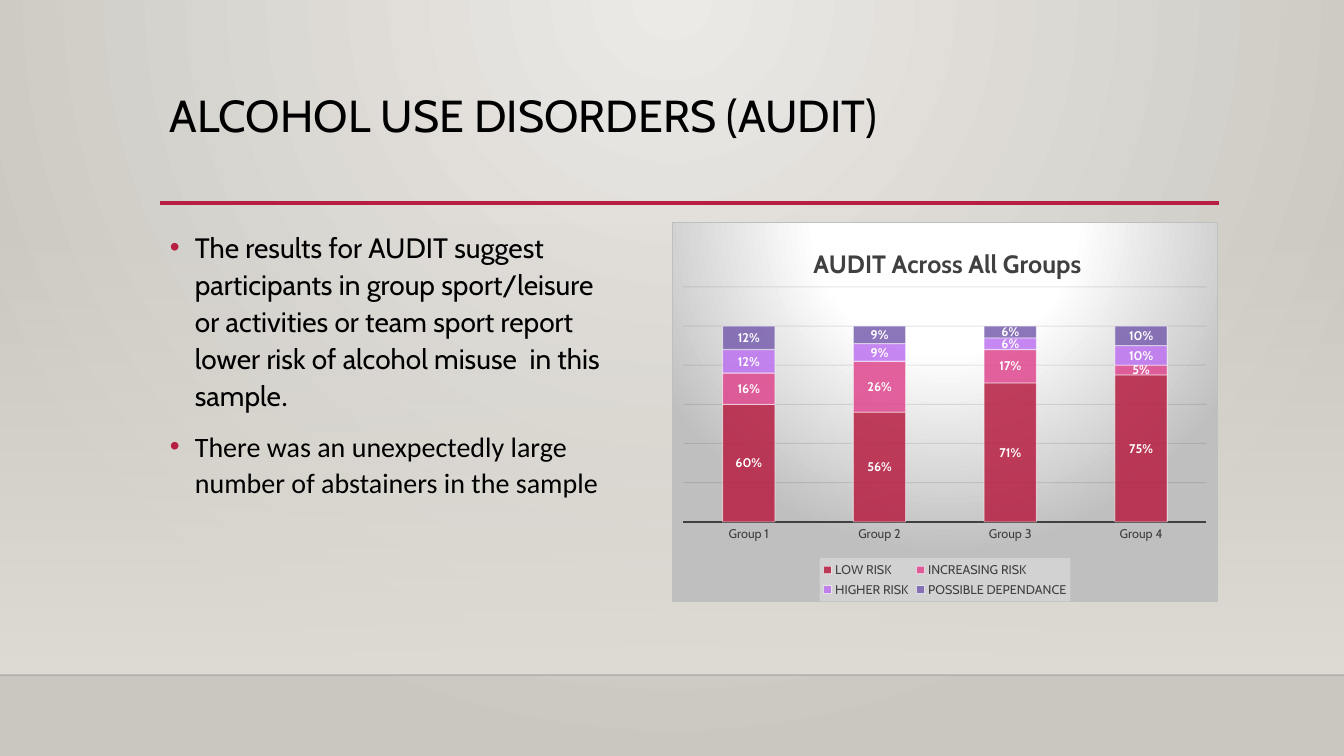
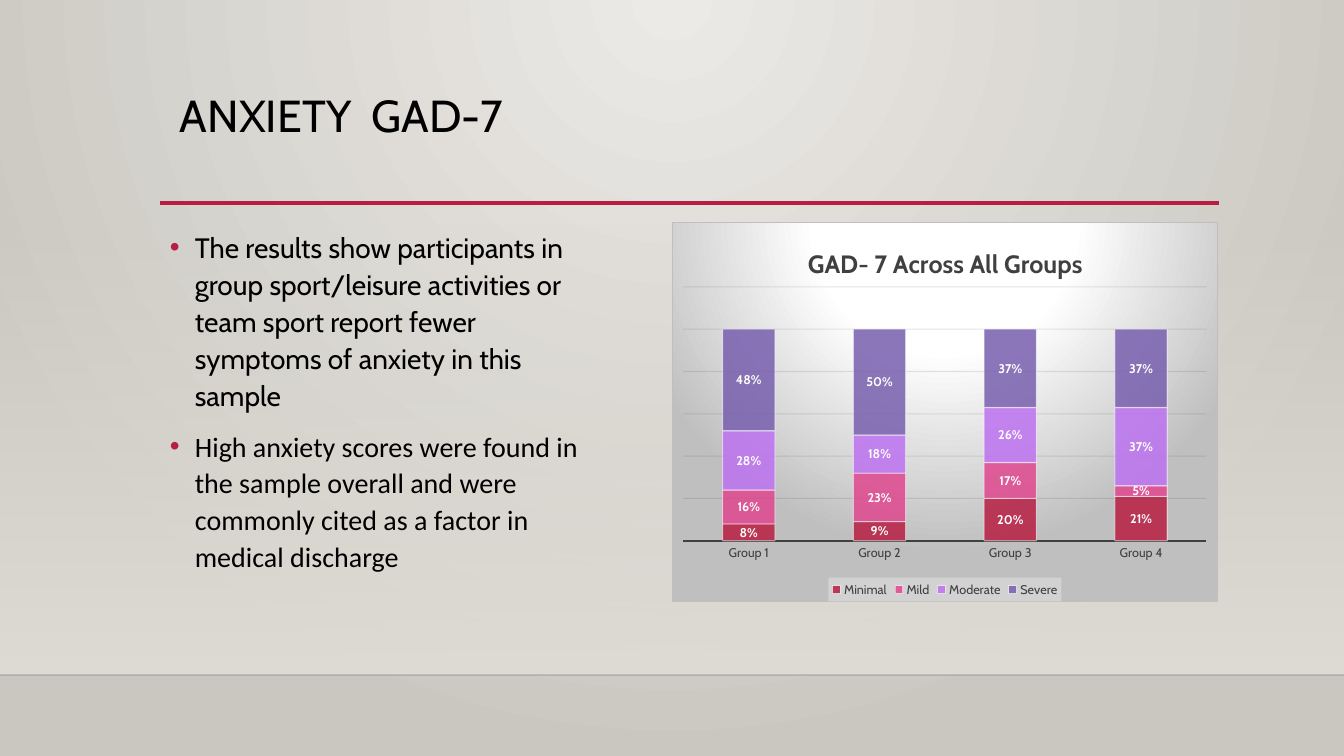
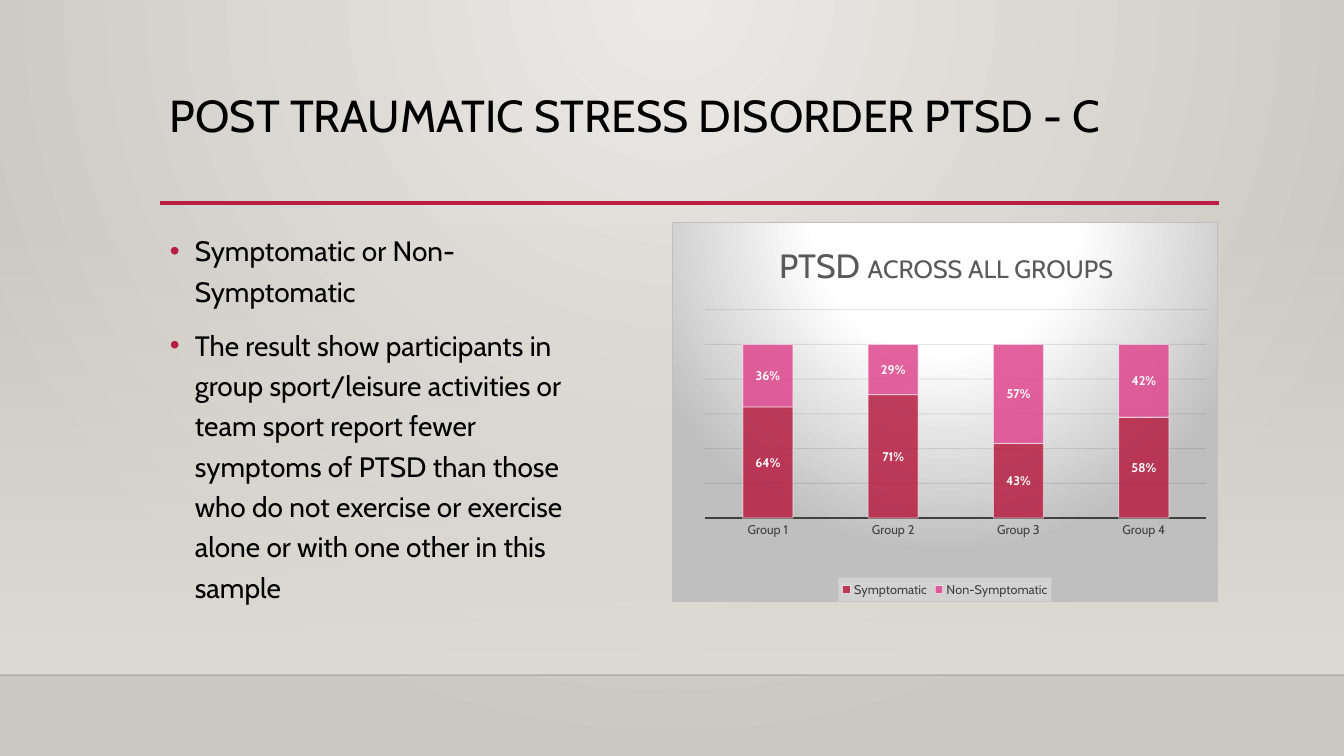
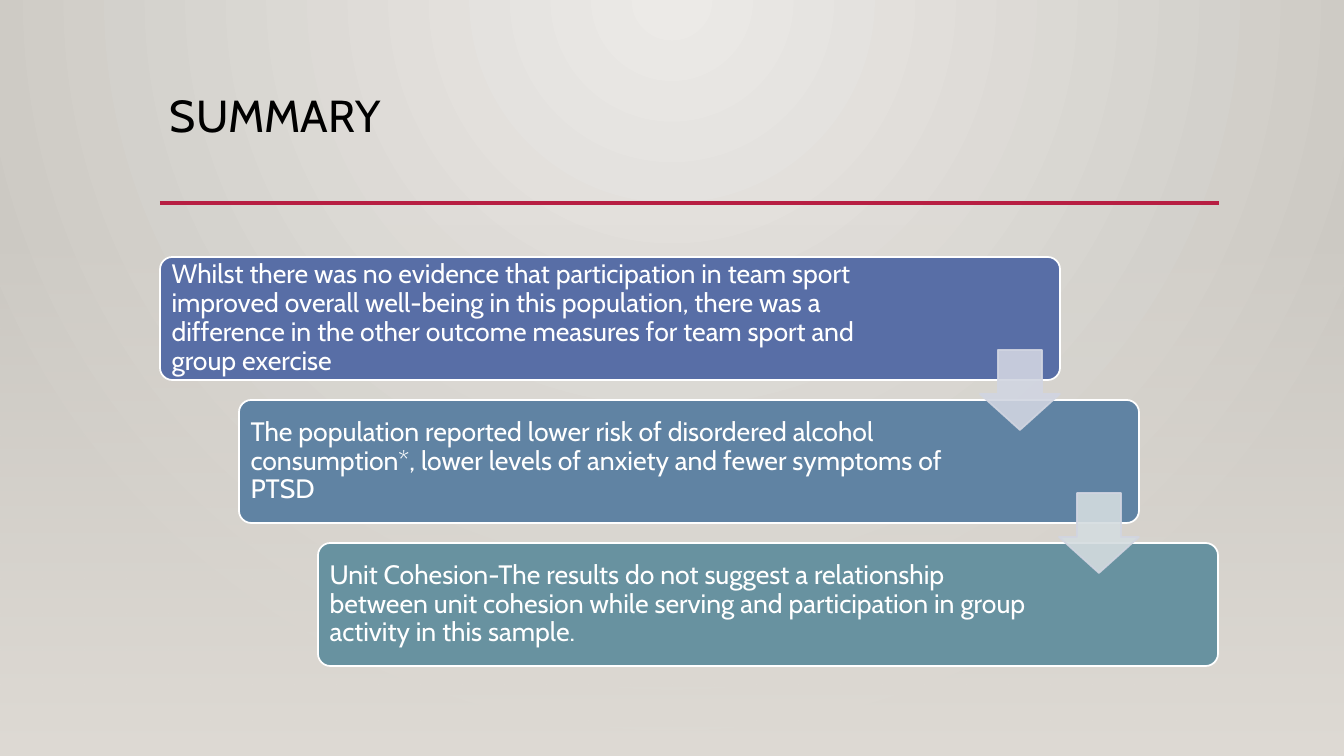
import pptx
import pptx.chart.data
import pptx.dml.color
import pptx.enum.chart
import pptx.enum.shapes
import pptx.enum.text
import pptx.oxml
import pptx.oxml.ns
import pptx.util
from lxml import etree

# Shared measures and styles
SLIDE_WIDTH, SLIDE_HEIGHT = 1344, 756
EMU_PER_PX = 12192000 / SLIDE_WIDTH
TITLE_BOX = (160, 89, 1059, 115)
BODY_BOX = (160, 222, 459, 380)
CHART_BOX = (672, 222, 546, 380)
CARDS_BOX = (160, 257, 1059, 410)
RULE_TOP, BAND_TOP, FOOTER_TOP = 203, 223, 675
FONT, BODY_FONT = "Cabin", "Calibri"
COLORS = {
    "text": "000000", "white": "FFFFFF", "accent": "B71E42", "footer": "000001",
    "light": "ECEAE7", "dark": "CAC7C1", "band": "DFDBD5",
    "chart edge": "BFBFBF", "chart text": "404040", "chart heading": "595959",
    "grid": "0D0D0D", "legend": "F2F2F2", "arrow line": "D1D5E1",
}
SERIES_COLORS = ["B71E42", "DE478E", "BC72F0", "795FAF"]
CARD_COLORS = ["586EA6", "6083A3", "6892A0"]
ARROW_COLORS = ["D1D5E1", "D4DCDF"]
NAMESPACES = pptx.oxml.ns.nsdecls("a", "c")
qn = pptx.oxml.ns.qn
Pt = pptx.util.Pt


def px(length):
    return pptx.util.Emu(round(length * EMU_PER_PX))


def box_emu(box):
    return [px(length) for length in box]


def rgb(color):
    return pptx.dml.color.RGBColor.from_string(color)


def apply_format(target, values):
    for name, value in values.items():
        setattr(target, name, value)


def style_font(font, size, color, name=FONT, bold=False):
    apply_format(font, {"size": Pt(size), "name": name, "bold": bold})
    font.color.rgb = rgb(color)


def style_fill(fill, color):
    fill.solid()
    fill.fore_color.rgb = rgb(color)


def style_line(line, color, width):
    style_fill(line.fill, color)
    line.width = Pt(width)


def fade(element, percent):
    """Make every colour under the element partly transparent."""
    for color in element.iter(qn("a:srgbClr")):
        etree.SubElement(color, qn("a:alpha")).set("val", str(percent * 1000))


def gradient(stops, focus=None):
    """Round gradient about a focus rectangle, or a downward one without it."""
    marks = "".join(
        f'<a:gs pos="{position * 1000}"><a:srgbClr val="{color}">'
        f'<a:alpha val="{alpha * 1000}"/></a:srgbClr></a:gs>'
        for position, color, alpha in stops)
    if focus:
        sides = " ".join(f'{side}="{value * 1000}"' for side, value in zip("ltrb", focus))
        direction = f'<a:path path="circle"><a:fillToRect {sides}/></a:path>'
    else:
        direction = '<a:lin ang="5400000" scaled="0"/>'
    return f'<a:gradFill {NAMESPACES}><a:gsLst>{marks}</a:gsLst>{direction}</a:gradFill>'


def replace_solid_fill(properties, gradient_xml):
    properties.replace(properties.find(qn("a:solidFill")), pptx.oxml.parse_xml(gradient_xml))


def set_background(master):
    master.background.fill.solid()
    stops = [(0, COLORS["light"], 100), (100, COLORS["dark"], 100)]
    replace_solid_fill(master.element.find(".//" + qn("p:bgPr")),
                       gradient(stops, (43, 0, 43, 100)))


def add_shape(slide, kind, box):
    shape = slide.shapes.add_shape(kind, *box_emu(box))
    shape.shadow.inherit = False
    return shape


def add_rule(slide, left, right, top, color, width):
    rule = slide.shapes.add_connector(pptx.enum.shapes.MSO_CONNECTOR.STRAIGHT,
                                      *box_emu((left, top, right, top)))
    style_line(rule.line, color, width)
    properties = rule._element.spPr
    etree.SubElement(properties, qn("a:effectLst"))
    return properties


def add_text_box(slide, box):
    text_frame = slide.shapes.add_textbox(*box_emu(box)).text_frame
    text_frame.word_wrap = True
    return text_frame


# Frame shared by all slides: band, rules and title
def add_frame(slide, title, title_indent=0, footer=True):
    bottom = FOOTER_TOP if footer else SLIDE_HEIGHT
    band = add_shape(slide, pptx.enum.shapes.MSO_SHAPE.RECTANGLE,
                     (0, BAND_TOP, SLIDE_WIDTH, bottom - BAND_TOP))
    band.fill.solid()
    band.line.fill.background()
    replace_solid_fill(band._element.spPr,
                       gradient([(0, COLORS["band"], 0), (100, COLORS["band"], 100)]))
    if footer:
        fade(add_rule(slide, 0, SLIDE_WIDTH, FOOTER_TOP, COLORS["footer"], 1), 20)
    left, top, width, height = TITLE_BOX
    add_rule(slide, left, left + width, RULE_TOP, COLORS["accent"], 2.5)
    paragraph = add_text_box(slide, TITLE_BOX).paragraphs[0]
    paragraph.line_spacing = 0.9
    paragraph._p.get_or_add_pPr().set("marL", str(px(title_indent)))
    run = paragraph.add_run()
    run.text = title
    style_font(run.font, 32, COLORS["text"])


# Bulleted text; each bullet is a list of (text, font) runs
def add_bullets(slide, box, bullets, line_spacing):
    text_frame = add_text_box(slide, box)
    for index, runs in enumerate(bullets):
        paragraph = text_frame.add_paragraph() if index else text_frame.paragraphs[0]
        apply_format(paragraph, {"line_spacing": line_spacing,
                                 "space_before": Pt(10 if index else 0)})
        properties = paragraph._p.get_or_add_pPr()
        properties.set("marL", str(px(25)))
        properties.set("indent", str(-px(25)))
        bullet_color = etree.SubElement(properties, qn("a:buClr"))
        etree.SubElement(bullet_color, qn("a:srgbClr")).set("val", COLORS["accent"])
        etree.SubElement(properties, qn("a:buFont")).set("typeface", "Arial")
        etree.SubElement(properties, qn("a:buChar")).set("char", "•")
        for text, font_name in runs:
            run = paragraph.add_run()
            run.text = text
            style_font(run.font, 20, COLORS["text"], font_name)


def set_layout(parent, position, values, inner=False):
    """Place a chart part by fractions of the chart: x, y and maybe w, h."""
    for layout in parent.findall(qn("c:layout")):
        parent.remove(layout)
    target = '<c:layoutTarget val="inner"/>' if inner else ""
    modes = '<c:xMode val="edge"/><c:yMode val="edge"/>'
    sizes = "".join(f'<c:{name} val="{value}"/>' for name, value in zip("xywh", values))
    parent.insert(position, pptx.oxml.parse_xml(
        f'<c:layout {NAMESPACES}><c:manualLayout>{target}{modes}{sizes}'
        '</c:manualLayout></c:layout>'))


# Stacked percentage chart
def add_risk_chart(slide, box, heading, heading_left, plot_box, series_values):
    data = pptx.chart.data.CategoryChartData(number_format="0%")
    data.categories = ["Group 1", "Group 2", "Group 3", "Group 4"]
    for name, percents in series_values:
        data.add_series(name, [percent / 100 for percent in percents])
    chart = slide.shapes.add_chart(pptx.enum.chart.XL_CHART_TYPE.COLUMN_STACKED,
                                   *box_emu(box), data).chart
    style_font(chart.font, 10, COLORS["text"])

    # Panel
    stops = [(0, COLORS["white"], 100), (39, COLORS["white"], 100),
             (100, COLORS["chart edge"], 100)]
    chart_space = chart._chartSpace
    chart_space.find(qn("c:chart")).addnext(pptx.oxml.parse_xml(
        f'<c:spPr {NAMESPACES}>{gradient(stops, (50, -80, 50, 180))}<a:ln w="9525">'
        f'<a:solidFill><a:srgbClr val="{COLORS["chart edge"]}"/></a:solidFill></a:ln></c:spPr>'))

    # Heading
    chart.has_title = True
    paragraph = chart.chart_title.text_frame.paragraphs[0]
    for text, size, color, bold in heading:
        run = paragraph.add_run()
        run.text = text
        style_font(run.font, size, color, bold=bold)
    set_layout(chart.chart_title._element, 1, (heading_left, 0.05))
    set_layout(chart_space.find(".//" + qn("c:plotArea")), 0, plot_box, inner=True)

    # Columns and their labels
    plot = chart.plots[0]
    apply_format(plot, {"gap_width": 150, "overlap": 100,
                        "vary_by_categories": False, "has_data_labels": True})
    apply_format(plot.data_labels, {
        "show_value": True, "number_format": "0%", "number_format_is_linked": False,
        "position": pptx.enum.chart.XL_LABEL_POSITION.CENTER})
    style_font(plot.data_labels.font, 9, COLORS["white"], bold=True)
    for series, color in zip(plot.series, SERIES_COLORS):
        style_fill(series.format.fill, color)
        style_line(series.format.line, COLORS["white"], 0.75)
        properties = series._element.find(qn("c:spPr"))
        fade(properties.find(qn("a:solidFill")), 85)
        fade(properties.find(qn("a:ln")), 50)

    # Axes
    no_tick = pptx.enum.chart.XL_TICK_MARK.NONE
    apply_format(chart.category_axis, {"major_tick_mark": no_tick, "minor_tick_mark": no_tick})
    style_font(chart.category_axis.tick_labels.font, 9, COLORS["chart text"])
    style_line(chart.category_axis.format.line, COLORS["chart text"], 1.5)
    apply_format(chart.value_axis, {"minimum_scale": 0, "maximum_scale": 1.2, "major_unit": 0.2,
                                    "has_major_gridlines": True, "visible": False})
    style_line(chart.value_axis.major_gridlines.format.line, COLORS["grid"], 0.75)
    fade(chart.value_axis._element.find(qn("c:majorGridlines")), 10)

    # Legend
    chart.has_legend = True
    apply_format(chart.legend, {"position": pptx.enum.chart.XL_LEGEND_POSITION.BOTTOM,
                                "include_in_layout": False})
    style_font(chart.legend.font, 9, COLORS["chart text"])
    legend_fill = pptx.oxml.parse_xml(
        f'<c:spPr {NAMESPACES}><a:solidFill><a:srgbClr val="{COLORS["legend"]}"/>'
        '</a:solidFill></c:spPr>')
    fade(legend_fill, 39)
    chart.legend._element.find(qn("c:txPr")).addprevious(legend_fill)


# Staircase of cards joined by arrows
def add_cards(slide, box, texts):
    left, top, width, height = box
    card_width, card_height, arrow_size = 900, 123, 80
    step_x = (width - card_width) // (len(texts) - 1)
    step_y = (height - card_height) // (len(texts) - 1)
    for index, (text, color) in enumerate(zip(texts, CARD_COLORS)):
        card = add_shape(slide, pptx.enum.shapes.MSO_SHAPE.ROUNDED_RECTANGLE,
                         (left + index * step_x, top + index * step_y, card_width, card_height))
        card.adjustments[0] = 0.1
        style_fill(card.fill, color)
        style_line(card.line, COLORS["white"], 1.25)
        apply_format(card.text_frame, {
            "word_wrap": True, "vertical_anchor": pptx.enum.text.MSO_ANCHOR.MIDDLE,
            "margin_left": px(8), "margin_right": px(171), "margin_top": 0, "margin_bottom": 0})
        paragraph = card.text_frame.paragraphs[0]
        apply_format(paragraph, {"alignment": pptx.enum.text.PP_ALIGN.LEFT, "line_spacing": 0.9})
        run = paragraph.add_run()
        run.text = text
        style_font(run.font, 19, COLORS["white"])
    for index, color in enumerate(ARROW_COLORS):
        gap_middle = top + index * step_y + (card_height + step_y) // 2
        arrow = add_shape(slide, pptx.enum.shapes.MSO_SHAPE.DOWN_ARROW,
                          (left + index * step_x + card_width - arrow_size,
                           gap_middle - arrow_size // 2, arrow_size, arrow_size))
        arrow.adjustments[0], arrow.adjustments[1] = 0.55, 0.45
        style_fill(arrow.fill, color)
        style_line(arrow.line, COLORS["arrow line"], 1.25)
        fade(arrow._element.spPr, 90)


def add_result_slide(slide, title, bullets, chart, title_indent=0, line_spacing=1.1):
    add_frame(slide, title, title_indent)
    add_bullets(slide, BODY_BOX, bullets, line_spacing)
    add_risk_chart(slide, CHART_BOX, **chart)


def add_summary_slide(slide, title, texts):
    add_frame(slide, title, footer=False)
    add_cards(slide, CARDS_BOX, texts)


RESULTS = [
    {
        "title": "ALCOHOL USE DISORDERS (AUDIT)",
        "bullets": [
            [("The results for AUDIT suggest participants in group sport/leisure or activities "
              "or team sport report lower risk of alcohol misuse  in this sample", FONT),
             (".", BODY_FONT)],
            [("There was an unexpectedly large number of abstainers in the sample", BODY_FONT)],
        ],
        "chart": {
            "heading": [("AUDIT Across All Groups", 18, COLORS["chart text"], True)],
            "heading_left": 0.25,
            "plot_box": (0.02, 0.17, 0.96, 0.62),
            "series_values": [
                ("LOW RISK", (60, 56, 71, 75)),
                ("INCREASING RISK", (16, 26, 17, 5)),
                ("HIGHER RISK", (12, 9, 6, 10)),
                ("POSSIBLE DEPENDANCE", (12, 9, 6, 10)),
            ],
        },
    },
    {
        "title": "ANXIETY  GAD-7",
        "title_indent": 10,
        "bullets": [
            [("The results show participants in group sport/leisure activities or team sport "
              "report fewer symptoms of anxiety in this sample", FONT)],
            [("High anxiety scores were found in the sample overall and were commonly cited "
              "as a factor in medical discharge", BODY_FONT)],
        ],
        "chart": {
            "heading": [("GAD- 7 Across All Groups", 18, COLORS["chart text"], True)],
            "heading_left": 0.24,
            "plot_box": (0.02, 0.17, 0.96, 0.67),
            "series_values": [
                ("Minimal", (8, 9, 20, 21)),
                ("Mild", (16, 23, 17, 5)),
                ("Moderate", (28, 18, 26, 37)),
                ("Severe", (48, 50, 37, 37)),
            ],
        },
    },
    {
        "title": "POST TRAUMATIC STRESS DISORDER PTSD - C",
        "line_spacing": 1.2,
        "bullets": [
            [("Symptomatic or Non-Symptomatic", FONT)],
            [("The result show participants in group sport/leisure activities or team sport "
              "report fewer symptoms of PTSD than those who do not exercise or exercise alone "
              "or with one other in this sample", FONT)],
        ],
        "chart": {
            "heading": [("PTSD ", 24, COLORS["chart heading"], False),
                        ("ACROSS ALL GROUPS", 18, COLORS["chart heading"], False)],
            "heading_left": 0.19,
            "plot_box": (0.06, 0.23, 0.92, 0.55),
            "series_values": [
                ("Symptomatic", (64, 71, 43, 58)),
                ("Non-Symptomatic", (36, 29, 57, 42)),
            ],
        },
    },
]
SUMMARY = [
    "Whilst there was no evidence that participation in team sport improved overall well-being "
    "in this population, there was a difference in the other outcome measures for team sport "
    "and group exercise",
    "The population reported lower risk of disordered alcohol consumption*, lower levels of "
    "anxiety and fewer symptoms of PTSD",
    "Unit Cohesion-The results do not suggest a relationship between unit cohesion while "
    "serving and participation in group activity in this sample.",
]


def main():
    presentation = pptx.Presentation()
    apply_format(presentation, {"slide_width": px(SLIDE_WIDTH), "slide_height": px(SLIDE_HEIGHT)})
    set_background(presentation.slide_master)
    blank = presentation.slide_layouts[6]
    for result in RESULTS:
        add_result_slide(presentation.slides.add_slide(blank), **result)
    add_summary_slide(presentation.slides.add_slide(blank), "SUMMARY", SUMMARY)
    presentation.save("out.pptx")


if __name__ == "__main__":
    main()
